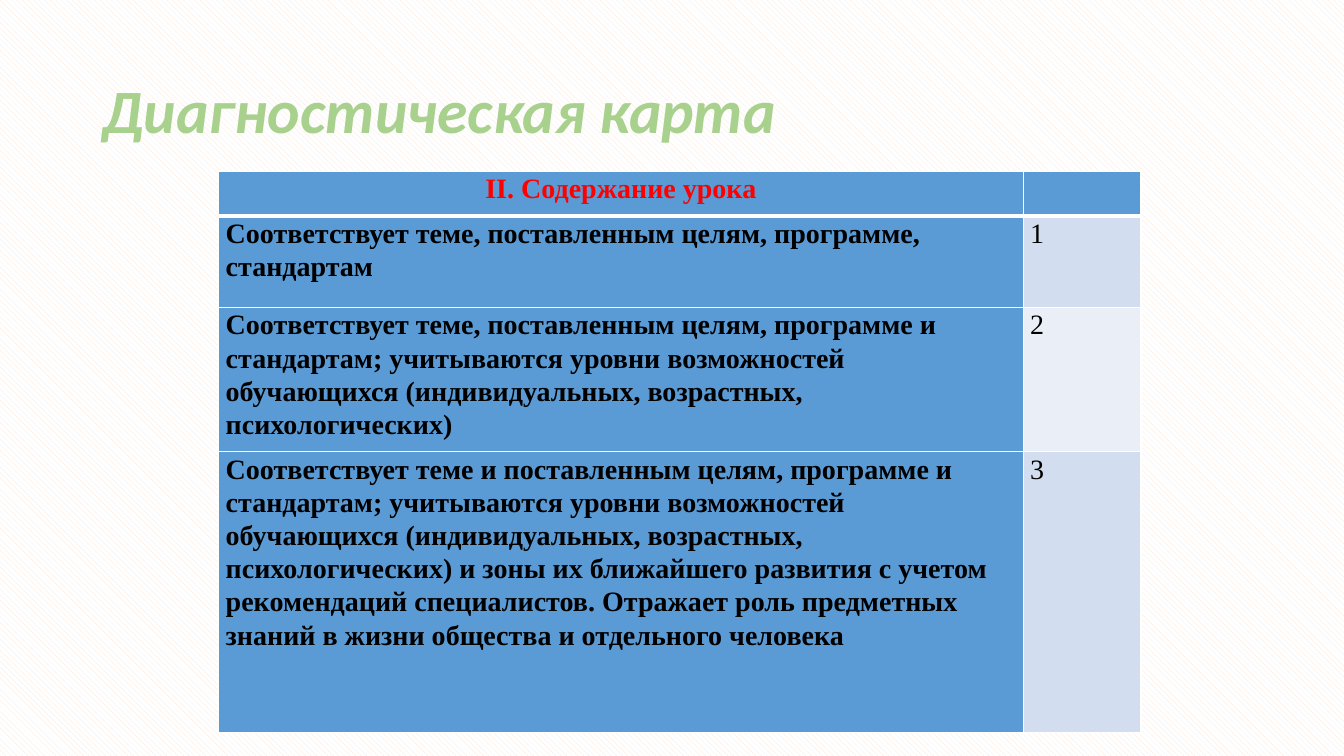
import dataclasses

import lxml.etree
import pptx
import pptx.dml.color
import pptx.enum.dml
import pptx.enum.text
import pptx.oxml.ns
import pptx.table
import pptx.text.text
import pptx.util

Pt = pptx.util.Pt
qn = pptx.oxml.ns.qn


@dataclasses.dataclass(frozen=True)
class Theme:
    title_font: str = "Calibri"
    table_font: str = "Times New Roman"
    title_size: float = 44
    table_size: float = 20
    title: str = "A9D18E"
    heading: str = "FF0000"
    text: str = "000000"
    accent: str = "5B9BD5"
    band_dark: str = "D2DEEF"
    band_light: str = "EAEFF7"
    white: str = "FFFFFF"
    hatch: str = "FBE5D6"


@dataclasses.dataclass(frozen=True)
class Criterion:
    text: str
    score: str
    height: float


THEME = Theme()
HEADER_HEIGHT = 31.7
COL_WIDTHS = (574.6, 84.2)
CRITERIA = (
    Criterion("Соответствует теме, поставленным целям, программе, стандартам", "1", 65.5),
    Criterion("Соответствует теме, поставленным целям, программе и стандартам; "
              "учитываются уровни возможностей обучающихся (индивидуальных, "
              "возрастных, психологических)", "2", 103),
    Criterion("Соответствует теме и поставленным целям, программе и стандартам; "
              "учитываются уровни возможностей обучающихся (индивидуальных, "
              "возрастных, психологических) и зоны их ближайшего развития с учетом "
              "рекомендаций специалистов. Отражает роль предметных знаний в жизни "
              "общества и отдельного человека", "3", 200.2),
)


def rgb(value: str) -> pptx.dml.color.RGBColor:
    return pptx.dml.color.RGBColor.from_string(value)


def add_run(p: pptx.text.text._Paragraph, text: str, font: str, size: float,
            color: str, bold: bool, italic: bool = False) -> None:
    r = p.add_run()
    r.text = text
    r.font.name = font
    r.font.size = Pt(size)
    r.font.color.rgb = rgb(color)
    r.font.bold = bold
    r.font.italic = italic


def set_borders(cell: pptx.table._Cell, top: float, bottom: float) -> None:
    tc_pr = cell._tc.get_or_add_tcPr()
    for side, width in (("L", 1), ("R", 1), ("T", top), ("B", bottom)):
        ln = lxml.etree.SubElement(tc_pr, qn(f"a:ln{side}"), w=str(Pt(width)))
        fill = lxml.etree.SubElement(ln, qn("a:solidFill"))
        lxml.etree.SubElement(fill, qn("a:srgbClr"), val=THEME.white)


def fill_cell(cell: pptx.table._Cell, row: int, fill: str, text: str,
              color: str, bold: bool) -> None:
    # The rule under the header is heavier than the others
    set_borders(cell, top=3 if row == 1 else 1, bottom=3 if row == 0 else 1)
    cell.fill.solid()
    cell.fill.fore_color.rgb = rgb(fill)
    cell.margin_left = cell.margin_right = Pt(5)
    cell.margin_top = cell.margin_bottom = Pt(0)
    if text:
        p = cell.text_frame.paragraphs[0]
        p.line_spacing = 1.07
        if row == 0:
            p.alignment = pptx.enum.text.PP_ALIGN.CENTER
        add_run(p, text, THEME.table_font, THEME.table_size, color, bold)


def main() -> None:
    prs = pptx.Presentation()
    prs.slide_width, prs.slide_height = Pt(960), Pt(540)
    s = prs.slides.add_slide(prs.slide_layouts[6])

    # Hatched background
    bg = s.background.fill
    bg.patterned()
    bg.pattern = pptx.enum.dml.MSO_PATTERN.WIDE_DOWNWARD_DIAGONAL
    bg.fore_color.rgb = rgb(THEME.hatch)
    bg.back_color.rgb = rgb(THEME.white)

    # Title
    sp = s.shapes.add_textbox(Pt(66), Pt(28.75), Pt(828), Pt(104.4))
    tf = sp.text_frame
    tf.word_wrap = True
    tf.vertical_anchor = pptx.enum.text.MSO_ANCHOR.MIDDLE
    p = tf.paragraphs[0]
    p.line_spacing = 0.9
    add_run(p, "Диагностическая карта", THEME.title_font, THEME.title_size,
            THEME.title, bold=True, italic=True)

    # Table frame
    heights = (HEADER_HEIGHT, *(c.height for c in CRITERIA))
    table = s.shapes.add_table(len(heights), len(COL_WIDTHS), Pt(156.25), Pt(122.6),
                               Pt(sum(COL_WIDTHS)), Pt(sum(heights))).table
    table.first_row = table.horz_banding = False
    for column, width in zip(table.columns, COL_WIDTHS):
        column.width = Pt(width)
    for row, height in zip(table.rows, heights):
        row.height = Pt(height)

    # Header row
    for col, text in enumerate(("II. Содержание урока", "")):
        fill_cell(table.cell(0, col), 0, THEME.accent, text, THEME.heading, True)

    # Criteria with their scores
    for i, criterion in enumerate(CRITERIA, start=1):
        band = THEME.band_dark if i % 2 else THEME.band_light
        fill_cell(table.cell(i, 0), i, THEME.accent, criterion.text, THEME.text, True)
        fill_cell(table.cell(i, 1), i, band, criterion.score, THEME.text, False)

    prs.save("out.pptx")


if __name__ == "__main__":
    main()
